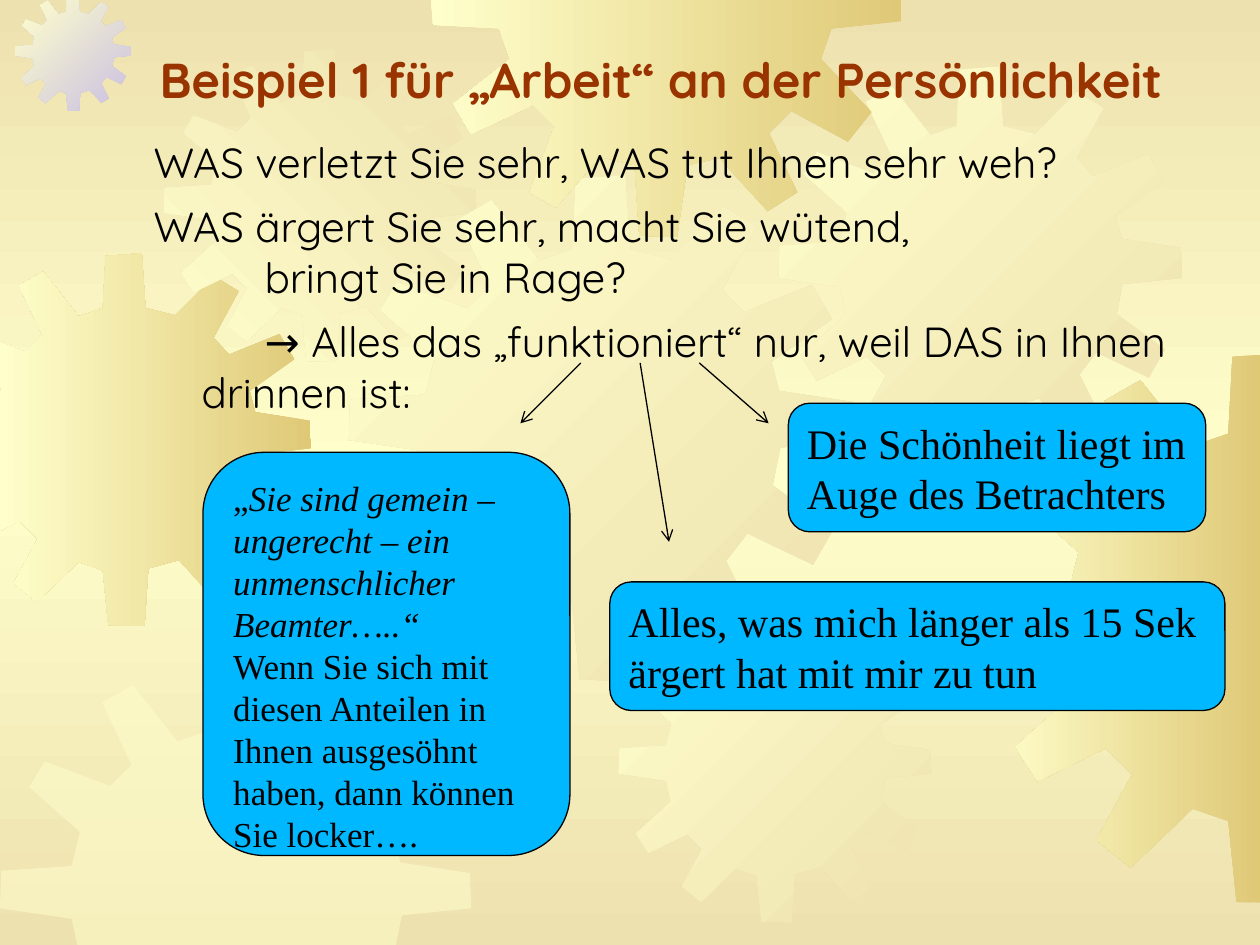
from copy import deepcopy
from dataclasses import dataclass
from typing import NamedTuple

from lxml import etree
from pptx import Presentation
from pptx.dml.color import RGBColor
from pptx.enum.shapes import MSO_CONNECTOR, MSO_SHAPE
from pptx.enum.text import MSO_ANCHOR, PP_ALIGN
from pptx.oxml.ns import qn
from pptx.util import Pt

STRAIGHT = MSO_CONNECTOR.STRAIGHT
ROUNDED = MSO_SHAPE.ROUNDED_RECTANGLE
TOP, MIDDLE, BOTTOM = MSO_ANCHOR.TOP, MSO_ANCHOR.MIDDLE, MSO_ANCHOR.BOTTOM
LEFT = PP_ALIGN.LEFT

SLIDE_WIDTH, SLIDE_HEIGHT = 720, 540


@dataclass(frozen=True)
class Theme:
    sand: str = "EDE1AF"
    cream: str = "FFFFCC"
    gold: str = "DFC977"
    lilac: str = "CAC0E2"
    rust: str = "993300"
    ink: str = "000000"
    sky: str = "00B8FF"
    sans: str = "Quicksand"
    serif: str = "Times New Roman"
    title_size: float = 28
    text_size: float = 24
    quote_size: float = 20
    leading: float = 1.2
    line_width: float = 0.75


THEME = Theme()


class Gear(NamedTuple):
    left: float
    top: float
    size: float
    color: str
    angle: float | None = None  # None: half transparent plain fill
    turned: bool = False


class Run(NamedTuple):
    text: str
    italic: bool = False


class Card(NamedTuple):
    left: float
    top: float
    width: float
    height: float
    size: float
    anchor: MSO_ANCHOR
    paragraphs: list[list[Run]]


class Arrow(NamedTuple):
    start: tuple[float, float]
    end: tuple[float, float]


OUTLINE_SIZE = 401
GEAR_OUTLINE = [
    (255, 67), (223, 59), (219, 0), (180, 3), (177, 59), (151, 68), (113, 20), (87, 35),
    (112, 88), (94, 106), (38, 85), (25, 107), (68, 145), (61, 174), (1, 178), (0, 210),
    (61, 219), (67, 246), (22, 287), (38, 312), (88, 288), (107, 307), (81, 355), (106, 375),
    (151, 332), (177, 341), (183, 400), (222, 401), (226, 339), (259, 330), (299, 374), (325, 358),
    (299, 306), (316, 284), (368, 309), (384, 281), (336, 246), (342, 216), (401, 210), (400, 180),
    (341, 171), (335, 148), (383, 114), (367, 87), (313, 109), (296, 91), (323, 41), (297, 25),
]
GEARS = [
    Gear(-35.3, 144.7, 213.1, THEME.gold, 180),
    Gear(8.6, -2.9, 66.2, THEME.lilac, 225),
    Gear(93.6, 28.1, 178.6, THEME.sand, 135),
    Gear(199.4, 100.1, 289, THEME.sand, 225),
    Gear(0, 378, 269.3, THEME.cream),
    Gear(353.5, 348.5, 178.6, THEME.sand, 225),
    Gear(445, 38.2, 230.4, THEME.sand, 225),
    Gear(563, 201.6, 314.6, THEME.gold, 180),
    Gear(245.5, -134.6, 270, THEME.gold, 180, turned=True),
]
CARDS = [
    Card(348.5, 332.5, 351.5, 73.5, THEME.text_size, MIDDLE,
         [[Run("Alles, was mich länger als 15 Sek ärgert hat mit mir zu tun")]]),
    Card(450.5, 230.4, 238.5, 73.5, THEME.text_size, MIDDLE,
         [[Run("Die Schönheit liegt im Auge des Betrachters")]]),
    Card(116, 258.5, 209.7, 230.4, THEME.quote_size, TOP,
         [[Run("„"), Run("Sie sind gemein – ungerecht – ein unmenschlicher Beamter…..“", True)],
          [Run("Wenn Sie sich mit diesen Anteilen in Ihnen ausgesöhnt haben, "
               "dann können Sie locker….")]]),
]
ARROWS = [
    Arrow((399.6, 207.4), (439.2, 241.9)),
    Arrow((365.8, 207.4), (382.3, 309.6)),
    Arrow((331.9, 207.4), (297.4, 241.9)),
]


def color(code: str) -> RGBColor:
    return RGBColor.from_string(code)


def clip(points: list, axis: int, limit: float, sign: int) -> list:
    """Keep the part of a polygon where sign * coordinate <= sign * limit."""
    kept = []
    for before, point in zip(points[-1:] + points[:-1], points):
        inside = sign * point[axis] <= sign * limit
        if inside != (sign * before[axis] <= sign * limit):
            share = (limit - before[axis]) / (point[axis] - before[axis])
            kept.append(tuple(b + share * (p - b) for b, p in zip(before, point)))
        if inside:
            kept.append(point)
    return kept


def fill_gradient(fill, first: str, last: str, angle: float) -> None:
    fill.gradient()
    fill.gradient_angle = (360 - angle) % 360
    for stop, code, position in zip(fill.gradient_stops, (first, last), (0, 1)):
        stop.color.rgb = color(code)
        stop.position = position


def paint_background(slide) -> None:
    """Sand at both edges, cream in the middle."""
    fill_gradient(slide.background.fill, THEME.sand, THEME.cream, 90)
    stops = slide.element.find(".//" + qn("a:gsLst"))
    stops[1].set("pos", "50000")
    edge = deepcopy(stops[0])
    edge.set("pos", "100000")
    stops.append(edge)


def draw_gear(slide, gear: Gear) -> None:
    scale = gear.size / OUTLINE_SIZE
    outline = [(y, OUTLINE_SIZE - x) if gear.turned else (x, y) for x, y in GEAR_OUTLINE]
    points = [(gear.left + x * scale, gear.top + y * scale) for x, y in outline]
    for axis, limit in enumerate((SLIDE_WIDTH, SLIDE_HEIGHT)):
        points = clip(clip(points, axis, 0, -1), axis, limit, 1)
    points = [(Pt(x), Pt(y)) for x, y in points]
    builder = slide.shapes.build_freeform(*points[0])
    builder.add_line_segments(points[1:], close=True)
    shape = builder.convert_to_shape()
    shape.shadow.inherit = False
    shape.line.fill.background()
    if gear.angle is None:
        shape.fill.solid()
        shape.fill.fore_color.rgb = color(gear.color)
        paint = shape.element.spPr.find(".//" + qn("a:srgbClr"))
        etree.SubElement(paint, qn("a:alpha")).set("val", "50000")
    else:
        fill_gradient(shape.fill, gear.color, THEME.cream, gear.angle)


def write(paragraph, runs: list[Run], *, font: str, size: float, ink: str = THEME.ink,
          bold: bool = False, before: float = 0, margin: float = 0, indent: float = 0,
          tab: float | None = None) -> None:
    """Fill a paragraph; a newline in a run becomes a line break."""
    properties = paragraph._p.get_or_add_pPr()
    properties.set("marL", str(Pt(margin)))
    properties.set("indent", str(Pt(indent)))
    if tab is not None:
        tabs = etree.SubElement(properties, qn("a:tabLst"))
        etree.SubElement(tabs, qn("a:tab"), pos=str(Pt(tab)), algn="l")
    paragraph.alignment = LEFT
    paragraph.line_spacing = Pt(size * THEME.leading)
    paragraph.space_before = Pt(before)
    for text, italic in runs:
        for number, line in enumerate(text.split("\n")):
            if number:
                paragraph.add_line_break()
            run = paragraph.add_run()
            run.text = line
            run.font.name, run.font.size = font, Pt(size)
            run.font.bold, run.font.italic = bold, italic
            run.font.color.rgb = color(ink)


def add_text_frame(slide, left: float, top: float, width: float, height: float):
    frame = slide.shapes.add_textbox(Pt(left), Pt(top), Pt(width), Pt(height)).text_frame
    frame.word_wrap = True
    return frame


def next_paragraph(frame, number: int):
    return frame.add_paragraph() if number else frame.paragraphs[0]


def draw_title(slide) -> None:
    frame = add_text_frame(slide, 84.2, 0.7, 612, 64.8)
    frame.vertical_anchor = BOTTOM
    write(frame.paragraphs[0], [Run("Beispiel 1 für „Arbeit“ an der Persönlichkeit")],
          font=THEME.sans, size=THEME.title_size, ink=THEME.rust, bold=True)


def draw_questions(slide) -> None:
    frame = add_text_frame(slide, 87.8, 78, 612, 384.5)
    frame.margin_left = frame.margin_top = frame.margin_right = frame.margin_bottom = 0
    hanging = 27.4
    questions = [
        ("WAS verletzt Sie sehr, WAS tut Ihnen sehr weh?", -hanging, None),
        ("WAS ärgert Sie sehr, macht Sie wütend,\n\tbringt Sie in Rage?", -hanging, 381),
        ("→ Alles das „funktioniert“ nur, weil DAS in Ihnen drinnen ist:", 36, None),
    ]
    for number, (text, indent, tab) in enumerate(questions):
        write(next_paragraph(frame, number), [Run(text)], font=THEME.sans, size=THEME.text_size,
              before=8 if number else 0, margin=hanging, indent=indent, tab=tab)


def draw_card(slide, card: Card) -> None:
    shape = slide.shapes.add_shape(ROUNDED, Pt(card.left), Pt(card.top),
                                   Pt(card.width), Pt(card.height))
    shape.shadow.inherit = False
    shape.fill.solid()
    shape.fill.fore_color.rgb = color(THEME.sky)
    shape.line.color.rgb = color(THEME.ink)
    shape.line.width = Pt(THEME.line_width)
    frame = shape.text_frame
    frame.word_wrap = True
    frame.vertical_anchor = card.anchor
    for number, runs in enumerate(card.paragraphs):
        write(next_paragraph(frame, number), runs, font=THEME.serif, size=card.size)


def draw_arrow(slide, arrow: Arrow) -> None:
    ends = [Pt(value) for value in arrow.start + arrow.end]
    connector = slide.shapes.add_connector(STRAIGHT, *ends)
    connector.line.color.rgb = color(THEME.ink)
    connector.line.width = Pt(THEME.line_width)
    outline = connector.element.spPr.find(qn("a:ln"))
    etree.SubElement(outline, qn("a:tailEnd"), type="arrow")
    etree.SubElement(connector.element.spPr, qn("a:effectLst"))


def main() -> None:
    presentation = Presentation()
    presentation.slide_width, presentation.slide_height = Pt(SLIDE_WIDTH), Pt(SLIDE_HEIGHT)
    slide = presentation.slides.add_slide(presentation.slide_layouts[6])
    paint_background(slide)
    for gear in GEARS:
        draw_gear(slide, gear)
    draw_title(slide)
    draw_questions(slide)
    for card in CARDS:
        draw_card(slide, card)
    for arrow in ARROWS:
        draw_arrow(slide, arrow)
    presentation.save("out.pptx")


if __name__ == "__main__":
    main()
